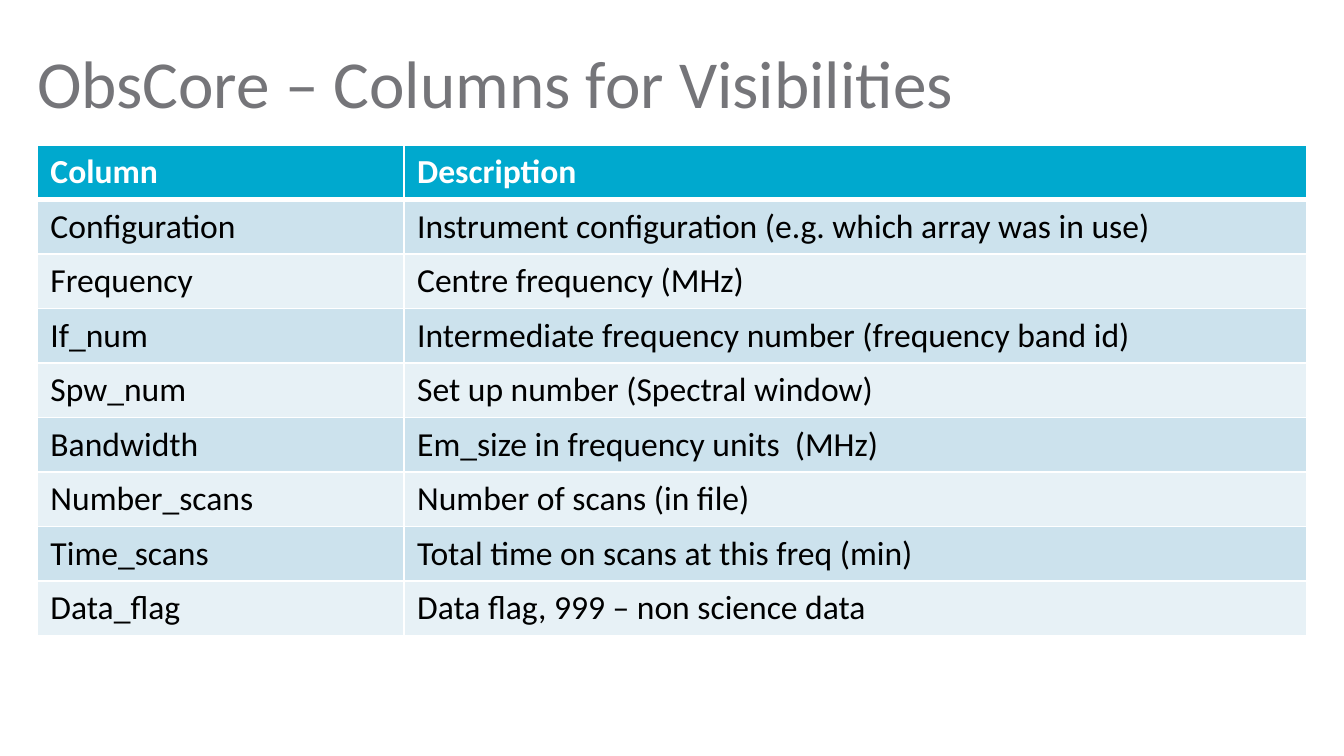
import pptx
import pptx.dml.color
import pptx.enum.text
import pptx.oxml
import pptx.oxml.ns
import pptx.util
from pptx.util import Cm

FONT = "Calibri"
COLORS = {
    "title": "757579",
    "header": "00A9CE",
    "odd_row": "CCE2ED",
    "even_row": "E7F1F6",
    "white": "FFFFFF",
    "black": "000000",
}
ROWS = [
    ("Column", "Description"),
    ("Configuration", "Instrument configuration (e.g. which array was in use)"),
    ("Frequency", "Centre frequency (MHz)"),
    ("If_num", "Intermediate frequency number (frequency band id)"),
    ("Spw_num", "Set up number (Spectral window)"),
    ("Bandwidth", "Em_size in frequency units  (MHz)"),
    ("Number_scans", "Number of scans (in file)"),
    ("Time_scans", "Total time on scans at this freq (min)"),
    ("Data_flag", "Data flag, 999 – non science data"),
]


def rgb(name):
    return pptx.dml.color.RGBColor.from_string(COLORS[name])


def style_para(para, size, color, bold=False):
    para.font.name = FONT
    para.font.size = pptx.util.Pt(size)
    para.font.bold = bold
    para.font.color.rgb = rgb(color)


def add_borders(cell, widths):
    """Draw white cell borders; widths maps L, R, T and B to points."""
    properties = cell._tc.get_or_add_tcPr()
    for side, width in widths.items():
        properties.append(pptx.oxml.parse_xml(
            f'<a:ln{side} {pptx.oxml.ns.nsdecls("a")} w="{pptx.util.Pt(width)}">'
            f'<a:solidFill><a:srgbClr val="{COLORS["white"]}"/></a:solidFill>'
            f'</a:ln{side}>'))


def fill_title(page, left, top, width, height):
    title = page.shapes.title
    title.left, title.top, title.width, title.height = left, top, width, height
    frame = title.text_frame
    frame.margin_left = frame.margin_right = 0
    frame.margin_top = frame.margin_bottom = 0
    frame.vertical_anchor = pptx.enum.text.MSO_ANCHOR.MIDDLE
    frame.text = "ObsCore – Columns for Visibilities"
    para = frame.paragraphs[0]
    para.alignment = pptx.enum.text.PP_ALIGN.LEFT
    style_para(para, 36, "title")


def add_column_table(page, left, top, width, height):
    table = page.shapes.add_table(len(ROWS), 2, left, top, width, height).table
    table.columns[0].width = Cm(6.93)
    table.columns[1].width = width - Cm(6.93)
    for row_index, texts in enumerate(ROWS):
        is_header = row_index == 0
        if is_header:
            fill = "header"
        else:
            fill = "odd_row" if row_index % 2 else "even_row"
        borders = {"L": 1, "R": 1, "T": 3 if row_index == 1 else 1,
                   "B": 3 if is_header else 1}
        for column_index, text in enumerate(texts):
            cell = table.cell(row_index, column_index)
            cell.text = text
            style_para(cell.text_frame.paragraphs[0], 18,
                       "white" if is_header else "black", is_header)
            add_borders(cell, borders)
            cell.fill.solid()
            cell.fill.fore_color.rgb = rgb(fill)


def main():
    deck = pptx.Presentation()
    deck.slide_width, deck.slide_height = Cm(25.4), Cm(14.29)
    page = deck.slides.add_slide(deck.slide_layouts.get_by_name("Title Only"))
    fill_title(page, Cm(0.7), Cm(0.66), Cm(24), Cm(1.78))
    add_column_table(page, Cm(0.7), Cm(2.74), Cm(24), len(ROWS) * Cm(1.03))
    deck.save("out.pptx")


if __name__ == "__main__":
    main()
